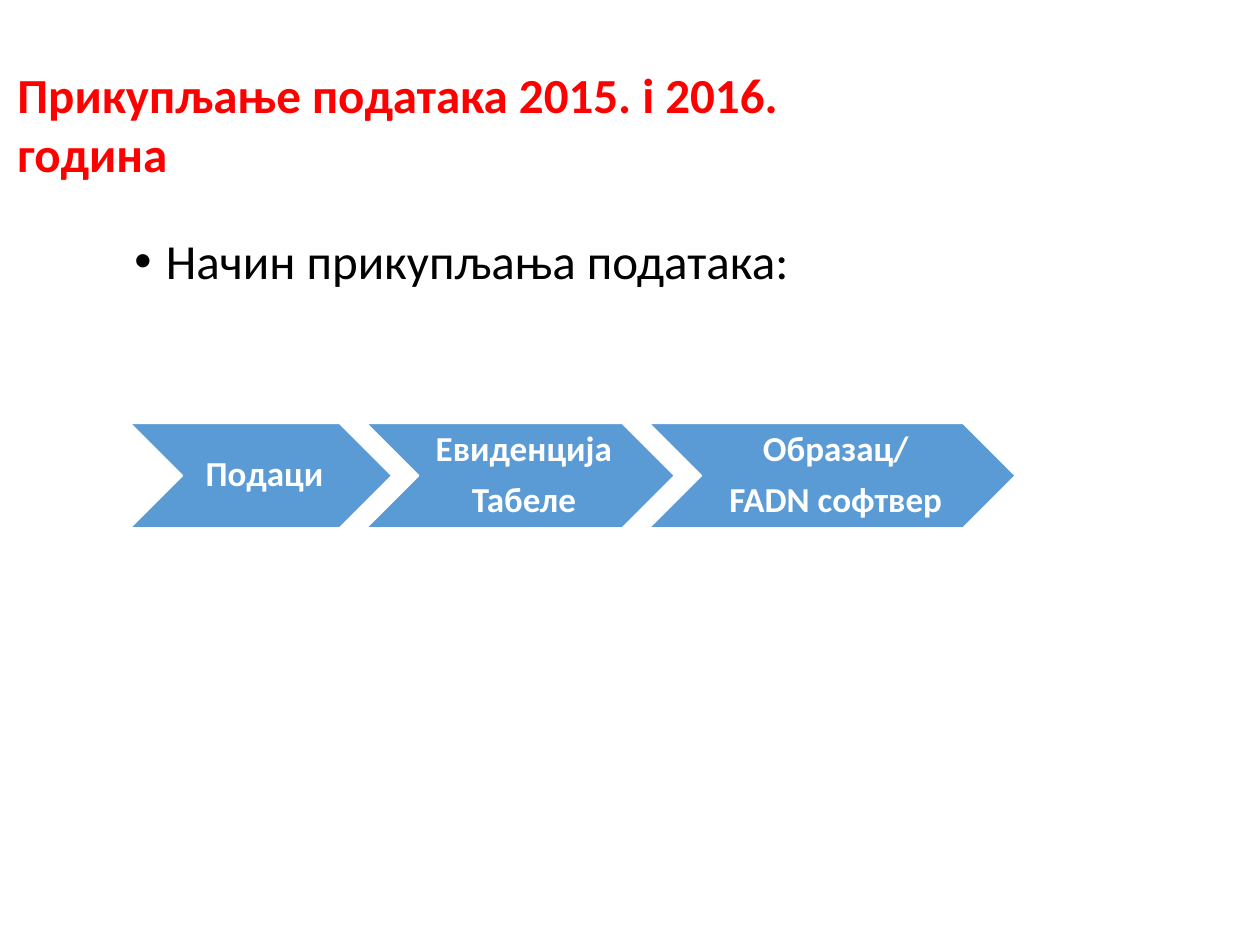
from dataclasses import dataclass

from lxml.etree import SubElement
from pptx import Presentation
from pptx.dml.color import RGBColor
from pptx.enum.shapes import MSO_SHAPE as Preset
from pptx.enum.text import MSO_ANCHOR as Anchor, PP_ALIGN as Align
from pptx.oxml.ns import qn
from pptx.slide import Slide
from pptx.text.text import TextFrame, _Paragraph as Paragraph
from pptx.util import Pt

COLORS = {"title": "FF0000", "body": "000000", "step": "5B9BD5", "white": "FFFFFF"}
FONT = "Calibri"
STEPS_LEFT, STEPS_TOP, STEP_HEIGHT, STEP_OVERLAP = 74.2, 241.9, 59.8, 14.8


@dataclass(frozen=True)
class Step:
    label: str
    width: float


STEPS = [
    Step("Подаци", 149.8),
    Step("Евиденција\nТабеле", 176.4),
    Step("Образац/\nFADN софтвер", 209.5),
]


def format_runs(paragraph: Paragraph, size: float, color: str, bold: bool = False) -> None:
    for run in paragraph.runs:
        run.font.name = FONT
        run.font.size = Pt(size)
        run.font.bold = bold
        run.font.color.rgb = RGBColor.from_string(COLORS[color])


def add_text(slide: Slide, text: str, left: float, top: float,
             width: float, height: float) -> TextFrame:
    frame = slide.shapes.add_textbox(Pt(left), Pt(top), Pt(width), Pt(height)).text_frame
    frame.word_wrap = True
    frame.text = text
    return frame


def add_bullet(paragraph: Paragraph, indent: float) -> None:
    properties = paragraph._p.get_or_add_pPr()
    properties.set("marL", str(Pt(indent)))
    properties.set("indent", str(-Pt(indent)))
    SubElement(properties, qn("a:buFont"), typeface="Arial")
    SubElement(properties, qn("a:buChar"), char="•")


def add_step(slide: Slide, step: Step, left: float) -> None:
    chevron = slide.shapes.add_shape(
        Preset.CHEVRON, Pt(left), Pt(STEPS_TOP), Pt(step.width), Pt(STEP_HEIGHT))
    chevron.shadow.inherit = False
    chevron.fill.solid()
    chevron.fill.fore_color.rgb = RGBColor.from_string(COLORS["step"])
    chevron.line.color.rgb = RGBColor.from_string(COLORS["white"])
    chevron.line.width = Pt(1)

    frame = chevron.text_frame
    frame.word_wrap = True
    frame.vertical_anchor = Anchor.MIDDLE
    frame.margin_left = Pt(6)
    frame.margin_top = frame.margin_right = frame.margin_bottom = Pt(2)
    frame.text = step.label
    for paragraph in frame.paragraphs:
        paragraph.alignment = Align.CENTER
        paragraph.line_spacing = 0.9
        paragraph.space_after = Pt(7)
        format_runs(paragraph, 20, "white", bold=True)


def main() -> None:
    deck = Presentation()
    deck.slide_width, deck.slide_height = Pt(720), Pt(540)
    slide = deck.slides.add_slide(deck.slide_layouts[6])

    method = add_text(slide, "Начин прикупљања података:", 69.8, 131.8, 648, 356.4)
    method_line = method.paragraphs[0]
    method_line.line_spacing = 0.9
    add_bullet(method_line, 18)
    format_runs(method_line, 28, "body")

    title = add_text(slide, "Прикупљање података 2015. i 2016. година", 2.9, 29.5, 522.7, 82.1)
    title.vertical_anchor = Anchor.MIDDLE
    format_runs(title.paragraphs[0], 28, "title", bold=True)

    left = STEPS_LEFT
    for step in STEPS:
        add_step(slide, step, left)
        left += step.width - STEP_OVERLAP

    deck.save("out.pptx")


if __name__ == "__main__":
    main()
